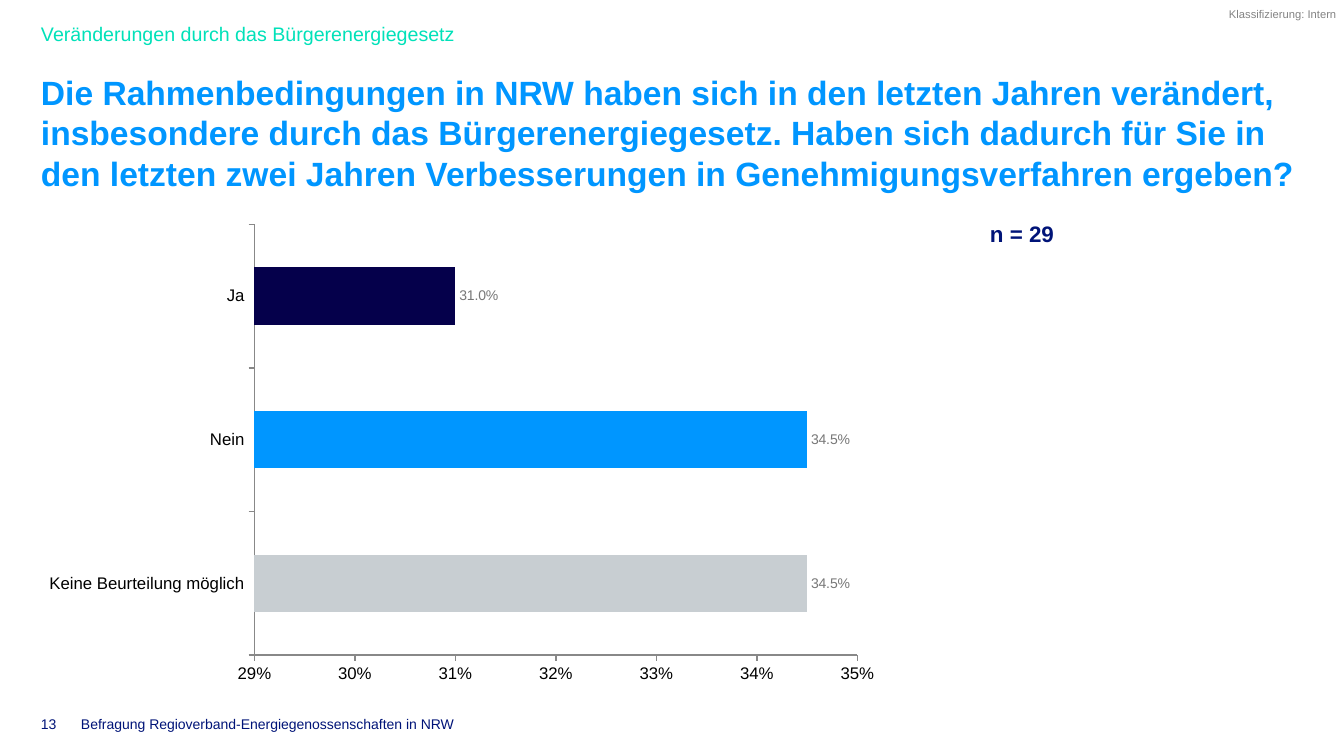
from lxml import etree
from pptx import Presentation
from pptx.chart.data import CategoryChartData
from pptx.dml.color import RGBColor
from pptx.enum.chart import XL_CHART_TYPE, XL_LABEL_POSITION, XL_TICK_MARK
from pptx.enum.text import MSO_ANCHOR
from pptx.oxml.ns import qn
from pptx.util import Emu, Pt

EMU_PER_PX = 12192000 / 1344
FONT = "Arial"
LEFT = 41
COLORS = {
    "navy": "001478",
    "blue": "0096FF",
    "mint": "00E1B9",
    "midnight": "05004B",
    "silver": "C8CED2",
    "axis": "888888",
    "label": "777777",
    "note": "838383",
    "black": "000000",
}
# Answers from the bottom bar to the top bar
ANSWERS = [
    ("Keine Beurteilung möglich", 0.345, "silver"),
    ("Nein", 0.345, "blue"),
    ("Ja", 0.31, "midnight"),
]
PLOT_AREA = {"x": 0.25, "y": 0.009, "w": 0.706, "h": 0.89}


def px(length):
    return Emu(round(length * EMU_PER_PX))


def color(name):
    return RGBColor.from_string(COLORS[name])


def style_font(font, size, color_name, bold=False):
    font.name = FONT
    font.size = Pt(size)
    font.bold = bold
    font.color.rgb = color(color_name)


def add_text(page, text, left, top, width, height, *, size, color_name,
             bold=False, anchor=MSO_ANCHOR.TOP, wrap=True):
    box = page.shapes.add_textbox(px(left), px(top), px(width), px(height))
    frame = box.text_frame
    frame.word_wrap = wrap
    frame.vertical_anchor = anchor
    frame.margin_left = frame.margin_right = 0
    frame.margin_top = frame.margin_bottom = 0
    span = frame.paragraphs[0].add_run()
    span.text = text
    style_font(span.font, size, color_name, bold)


def style_axis(axis):
    axis.has_major_gridlines = False
    axis.major_tick_mark = XL_TICK_MARK.OUTSIDE
    axis.minor_tick_mark = XL_TICK_MARK.NONE
    axis.format.line.color.rgb = color("axis")
    axis.format.line.width = Pt(1)
    style_font(axis.tick_labels.font, 12, "black")


def fix_plot_area(chart):
    plot_area = chart.plots[0]._element.getparent()
    for old_layout in plot_area.findall(qn("c:layout")):
        plot_area.remove(old_layout)
    layout = etree.Element(qn("c:layout"))
    plot_area.insert(0, layout)
    manual = etree.SubElement(layout, qn("c:manualLayout"))
    settings = {"layoutTarget": "inner", "xMode": "edge", "yMode": "edge", **PLOT_AREA}
    for tag, value in settings.items():
        etree.SubElement(manual, qn(f"c:{tag}")).set("val", str(value))


def add_answer_chart(page, left, top, width, height):
    data = CategoryChartData(number_format="0.0%")
    data.categories = [answer for answer, _, _ in ANSWERS]
    data.add_series("Series 1", [share for _, share, _ in ANSWERS])
    chart = page.shapes.add_chart(XL_CHART_TYPE.BAR_CLUSTERED, px(left), px(top),
                                  px(width), px(height), data).chart
    chart.has_legend = False
    chart.has_title = False
    style_font(chart.font, 10, "navy")
    fix_plot_area(chart)

    # Axes
    style_axis(chart.category_axis)
    style_axis(chart.value_axis)
    chart.value_axis.minimum_scale = 0.29
    chart.value_axis.maximum_scale = 0.35
    chart.value_axis.major_unit = 0.01
    chart.value_axis.tick_labels.number_format = "0%"
    chart.value_axis.tick_labels.number_format_is_linked = False

    # Bars
    plot = chart.plots[0]
    plot.gap_width = 150
    plot.vary_by_categories = False
    series = plot.series[0]
    for index, (_, _, fill_name) in enumerate(ANSWERS):
        bar = series.points[index].format
        bar.fill.solid()
        bar.fill.fore_color.rgb = color(fill_name)
        bar.line.fill.background()

    # Value labels
    labels = series.data_labels
    labels.show_value = True
    labels.number_format = "#0.0%"
    labels.number_format_is_linked = False
    labels.position = XL_LABEL_POSITION.OUTSIDE_END
    style_font(labels.font, 10, "label")


def main():
    deck = Presentation()
    deck.slide_width, deck.slide_height = px(1344), px(756)
    page = deck.slides.add_slide(deck.slide_layouts[6])

    # Heading
    add_text(page, "Klassifizierung: Intern", 1229, 7, 115, 13,
             size=8, color_name="note")
    add_text(page, "Veränderungen durch das Bürgerenergiegesetz", LEFT, 17, 830, 28,
             size=14, color_name="mint", anchor=MSO_ANCHOR.BOTTOM)
    add_text(page, "Die Rahmenbedingungen in NRW haben sich in den letzten Jahren verändert, "
             "insbesondere durch das Bürgerenergiegesetz. Haben sich dadurch für Sie in "
             "den letzten zwei Jahren Verbesserungen in Genehmigungsverfahren ergeben?",
             LEFT, 72, 1262, 119, size=24, color_name="blue", bold=True)

    # Survey result
    add_answer_chart(page, LEFT, 220, 854, 484)
    add_text(page, "n = 29", 990, 220, 313, 88, size=16, color_name="navy", bold=True)

    # Footer
    footer = {"size": 10, "color_name": "navy", "anchor": MSO_ANCHOR.BOTTOM, "wrap": False}
    add_text(page, "13", LEFT, 716, 24, 16, **footer)
    add_text(page, "Befragung Regioverband-Energiegenossenschaften in NRW",
             81, 716, 568, 16, **footer)

    deck.save("out.pptx")


if __name__ == "__main__":
    main()
